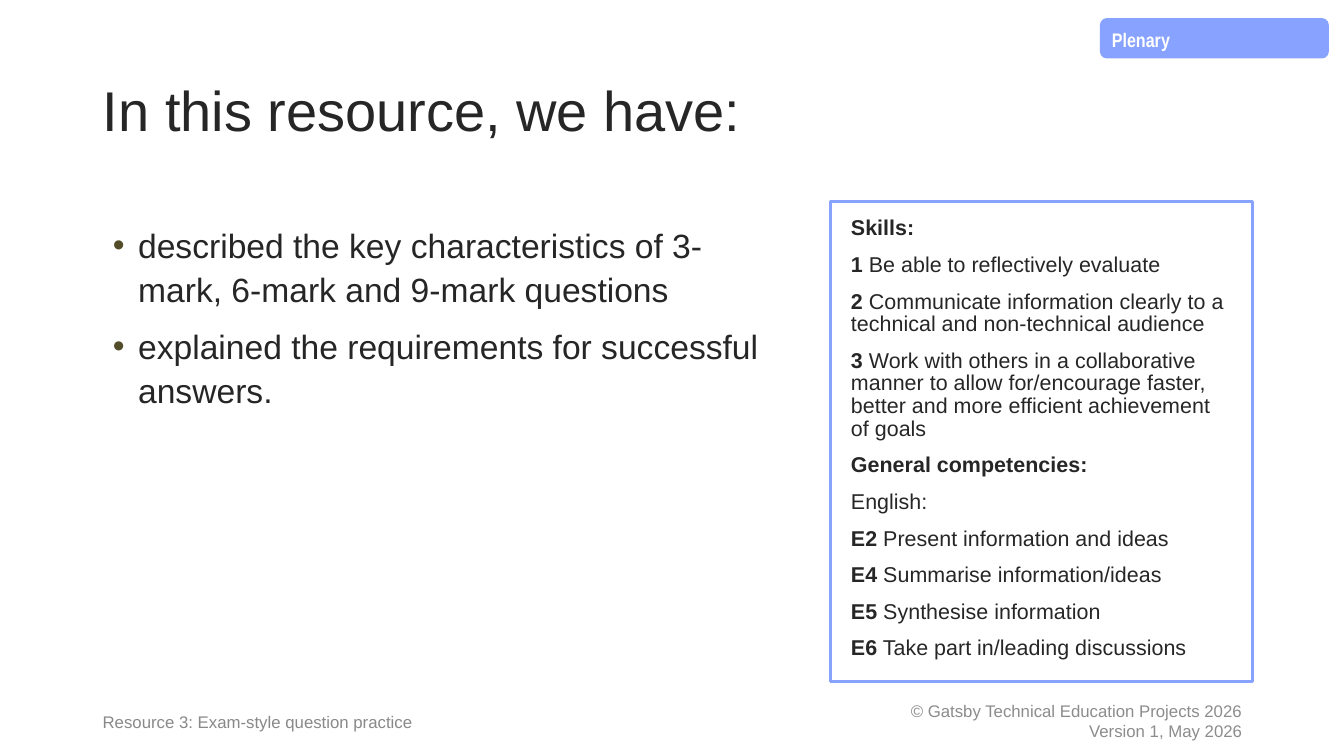
from dataclasses import dataclass

from lxml import etree
from pptx import Presentation
from pptx.dml.color import RGBColor
from pptx.enum.shapes import MSO_SHAPE
from pptx.enum.text import MSO_ANCHOR, MSO_AUTO_SIZE, PP_ALIGN
from pptx.oxml.ns import qn
from pptx.util import Inches, Pt

TAG_SHAPE = MSO_SHAPE.FLOWCHART_ALTERNATE_PROCESS
TOP, MIDDLE = MSO_ANCHOR.TOP, MSO_ANCHOR.MIDDLE
LEFT, RIGHT = PP_ALIGN.LEFT, PP_ALIGN.RIGHT
NO_AUTOFIT = MSO_AUTO_SIZE.NONE
TWO_CONTENT_LAYOUT = 3


@dataclass(frozen=True)
class TextStyle:
    size: float
    color: str
    font: str = "Arial"
    bold: bool = False
    align: PP_ALIGN = LEFT
    line_spacing: float = 1.0
    space_before: float = 0


@dataclass(frozen=True)
class Theme:
    accent: str = "88A2FF"
    white: str = "FFFFFF"
    bullet: str = "534C29"
    title: TextStyle = TextStyle(40, "262626", line_spacing=0.9)
    body: TextStyle = TextStyle(24, "262626", line_spacing=1.08, space_before=10)
    skills: TextStyle = TextStyle(15.3, "262626", line_spacing=0.88, space_before=10)
    tag: TextStyle = TextStyle(14, "FFFFFF", "Arial Narrow", True, line_spacing=1.08)
    resource: TextStyle = TextStyle(12, "898989", line_spacing=1.08)
    copyright: TextStyle = TextStyle(12, "8C8C8C", align=RIGHT)


@dataclass(frozen=True)
class Entry:
    """A line of text: a bold lead followed by plain text."""
    lead: str = ""
    text: str = ""


@dataclass(frozen=True)
class Area:
    left: float
    top: float
    width: float
    height: float

    def lengths(self) -> list:
        return [Inches(n) for n in (self.left, self.top, self.width, self.height)]


THEME = Theme()
TITLE_AREA = Area(0.92, 0.4, 11.5, 1.45)
OUTCOMES_AREA = Area(0.92, 2, 7, 4.76)
SKILLS_AREA = Area(8.24, 2, 4.18, 4.76)
TAG_AREA = Area(10.91, 0.18, 2.27, 0.4)
RESOURCE_AREA = Area(0.92, 6.95, 4.6, 0.4)
COPYRIGHT_AREA = Area(7.92, 6.95, 4.5, 0.4)

OUTCOMES = [
    Entry(text="described the key characteristics of 3-mark, 6-mark and 9-mark questions"),
    Entry(text="explained the requirements for successful answers."),
]
SKILLS = [
    Entry("Skills:"),
    Entry("1", " Be able to reflectively evaluate"),
    Entry("2", " Communicate information clearly to a technical and non-technical audience"),
    Entry("3", " Work with others in a collaborative manner to allow for/encourage "
               "faster, better and more efficient achievement of goals"),
    Entry("General competencies:"),
    Entry(text="English:"),
    Entry("E2", " Present information and ideas"),
    Entry("E4", " Summarise information/ideas"),
    Entry("E5", " Synthesise information"),
    Entry("E6", " Take part in/leading discussions"),
]
COPYRIGHT = [
    Entry(text="© Gatsby Technical Education Projects 2026"),
    Entry(text="Version 1, May 2026"),
]


def rgb(color: str) -> RGBColor:
    return RGBColor.from_string(color)


def place(box, area: Area) -> None:
    box.left, box.top, box.width, box.height = area.lengths()


def paint(box, color: str) -> None:
    box.fill.solid()
    box.fill.fore_color.rgb = rgb(color)


def set_bullet(para, bulleted: bool) -> None:
    properties = para._p.get_or_add_pPr()
    indent = Inches(0.25) if bulleted else 0
    properties.set("marL", str(indent))
    properties.set("indent", str(-indent))
    if not bulleted:
        etree.SubElement(properties, qn("a:buNone"))
        return
    color = etree.SubElement(properties, qn("a:buClr"))
    etree.SubElement(color, qn("a:srgbClr"), val=THEME.bullet)
    etree.SubElement(properties, qn("a:buFont"), typeface="Arial")
    etree.SubElement(properties, qn("a:buChar"), char="•")


def write(box, entries: list[Entry], style: TextStyle, anchor: MSO_ANCHOR = MIDDLE,
          inset: tuple[float, float] = (0.1, 0.05), bulleted: bool = False) -> None:
    """Fill a box with styled paragraphs; inset is horizontal, vertical."""
    frame = box.text_frame
    frame.word_wrap = True
    frame.auto_size = NO_AUTOFIT
    frame.vertical_anchor = anchor
    frame.margin_left = frame.margin_right = Inches(inset[0])
    frame.margin_top = frame.margin_bottom = Inches(inset[1])
    for index, entry in enumerate(entries):
        para = frame.add_paragraph() if index else frame.paragraphs[0]
        set_bullet(para, bulleted)
        para.alignment = style.align
        para.line_spacing = style.line_spacing
        para.space_before = Pt(style.space_before if index else 0)
        para.font.name = style.font
        para.font.size = Pt(style.size)
        para.font.bold = style.bold
        para.font.color.rgb = rgb(style.color)
        if entry.lead:
            span = para.add_run()
            span.text = entry.lead
            span.font.bold = True
        if entry.text:
            para.add_run().text = entry.text


def add_label(page, area: Area, entries: list[Entry], style: TextStyle) -> None:
    write(page.shapes.add_textbox(*area.lengths()), entries, style)


def add_tag(page) -> None:
    tag = page.shapes.add_shape(TAG_SHAPE, *TAG_AREA.lengths())
    tag.shadow.inherit = False
    paint(tag, THEME.accent)
    tag.line.fill.background()
    write(tag, [Entry(text="Plenary")], THEME.tag)


def main() -> None:
    deck = Presentation()
    deck.slide_width, deck.slide_height = Inches(13.33), Inches(7.5)
    page = deck.slides.add_slide(deck.slide_layouts[TWO_CONTENT_LAYOUT])
    title, outcomes, skills = page.placeholders

    place(title, TITLE_AREA)
    write(title, [Entry(text="In this resource, we have:")], THEME.title)

    place(outcomes, OUTCOMES_AREA)
    write(outcomes, OUTCOMES, THEME.body, TOP, (0.2, 0.2), bulleted=True)

    place(skills, SKILLS_AREA)
    paint(skills, THEME.white)
    skills.line.color.rgb = rgb(THEME.accent)
    skills.line.width = Pt(2.25)
    write(skills, SKILLS, THEME.skills, TOP, (0.2, 0.16))

    add_tag(page)
    add_label(page, RESOURCE_AREA, [Entry(text="Resource 3: Exam-style question practice")],
              THEME.resource)
    add_label(page, COPYRIGHT_AREA, COPYRIGHT, THEME.copyright)
    deck.save("out.pptx")


if __name__ == "__main__":
    main()
